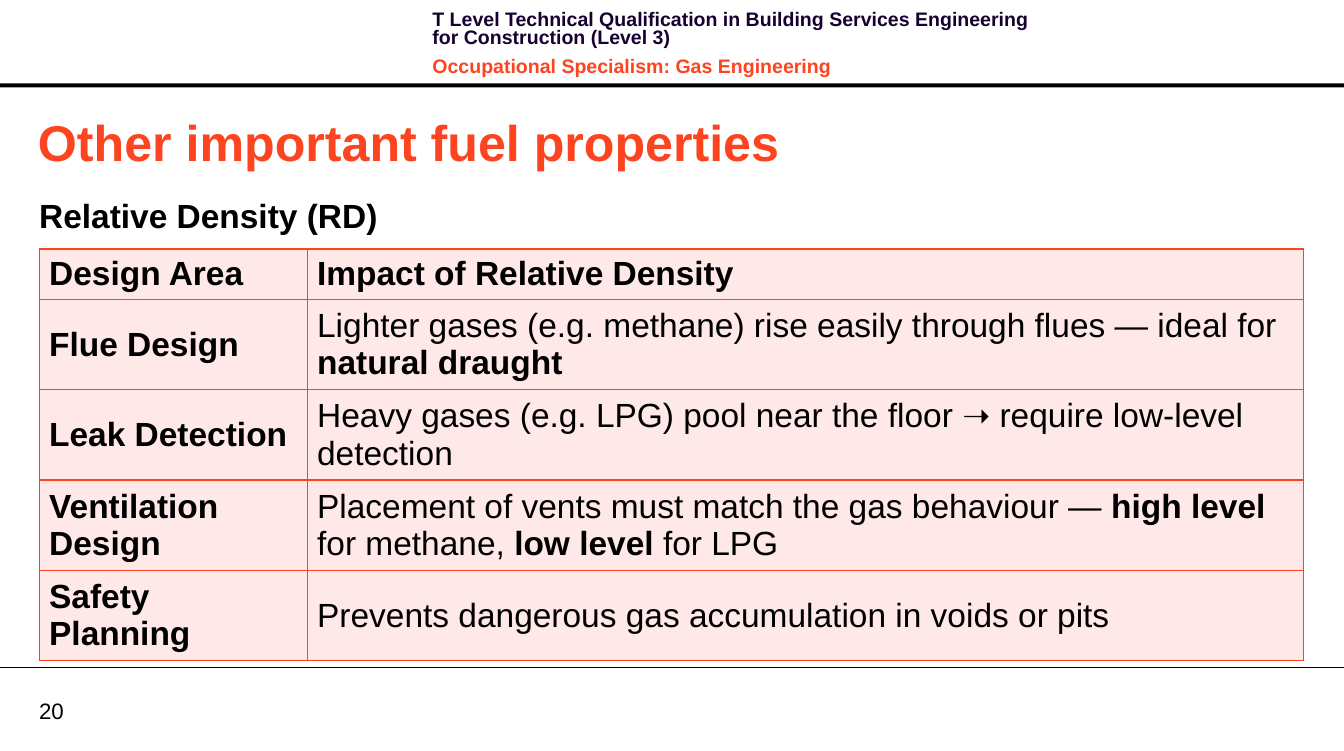
from dataclasses import dataclass

from lxml import etree
from pptx import Presentation
from pptx import util as u
from pptx.dml.color import RGBColor
from pptx.enum import shapes, text
from pptx.oxml.ns import qn


@dataclass(frozen=True)
class Theme:
    font: str = "Arial"
    black: str = "000000"
    navy: str = "170130"
    orange: str = "FC4421"
    pink: str = "FEE9E8"
    title: int = 36
    body: int = 24
    number: int = 16
    header: int = 14


HEADER = (
    "**T Level Technical Qualification in Building Services Engineering for Construction (Level 3)**",
    "**Occupational Specialism: Gas Engineering**",
)
DENSITY_ROWS = (
    ("**Design Area**", "**Impact of Relative Density**"),
    ("**Flue Design**",
     "Lighter gases (e.g. methane) rise easily through flues — ideal for **natural draught**"),
    ("**Leak Detection**",
     "Heavy gases (e.g. LPG) pool near the floor ➝ require low-level detection"),
    ("**Ventilation Design**",
     "Placement of vents must match the gas behaviour — **high level** for methane, **low level** for LPG"),
    ("**Safety Planning**", "Prevents dangerous gas accumulation in voids or pits"),
)


def inches(*values):
    return [u.Inches(v) for v in values]


def assign(target, values):
    for name, value in values.items():
        setattr(target, name, value)


class SlideBuilder:
    def __init__(self, slide, theme):
        self.s = slide
        self.theme = theme

    def add_runs(self, p, content, size, color, **paragraph_format):
        """Fill a paragraph; text between double asterisks is bold."""
        assign(p, paragraph_format)
        for i, part in enumerate(content.split("**")):
            if part:
                r = p.add_run()
                r.text = part
                assign(r.font, {"name": self.theme.font, "size": u.Pt(size), "bold": i % 2 == 1})
                r.font.color.rgb = RGBColor.from_string(color)

    def text_box(self, box, inset=(0, 0), anchor=text.MSO_ANCHOR.TOP):
        tf = self.s.shapes.add_textbox(*inches(*box)).text_frame
        x, y = inches(*inset)
        assign(tf, {"word_wrap": True, "vertical_anchor": anchor, "margin_left": x,
                    "margin_right": x, "margin_top": y, "margin_bottom": y})
        return tf

    def bar(self, box, color):
        sp = self.s.shapes.add_shape(shapes.MSO_SHAPE.RECTANGLE, *inches(*box))
        sp.shadow.inherit = False
        sp.fill.solid()
        sp.fill.fore_color.rgb = RGBColor.from_string(color)
        sp.line.fill.background()

    def rule(self, start, end, color, width):
        line = self.s.shapes.add_connector(shapes.MSO_CONNECTOR.STRAIGHT, *inches(*start, *end))
        line.line.color.rgb = RGBColor.from_string(color)
        line.line.width = u.Pt(width)
        etree.SubElement(line._element.spPr, qn("a:effectLst"))

    def border(self, cell, color, width):
        tc_pr = cell._tc.get_or_add_tcPr()
        for i, side in enumerate(("lnL", "lnR", "lnT", "lnB")):
            ln = etree.Element(qn(f"a:{side}"), w=str(u.Pt(width)))
            fill = etree.SubElement(ln, qn("a:solidFill"))
            etree.SubElement(fill, qn("a:srgbClr"), val=color)
            tc_pr.insert(i, ln)

    def table(self, left, top, widths, heights, rows):
        t = self.theme
        box = inches(left, top, sum(widths), sum(heights))
        table = self.s.shapes.add_table(len(rows), len(widths), *box).table
        assign(table, {"first_row": False, "horz_banding": False})
        for column, width in zip(table.columns, widths):
            column.width = u.Inches(width)
        for row, height, contents in zip(table.rows, heights, rows):
            row.height = u.Inches(height)
            for cell, content in zip(row.cells, contents):
                cell.vertical_anchor = text.MSO_ANCHOR.MIDDLE
                cell.fill.solid()
                cell.fill.fore_color.rgb = RGBColor.from_string(t.pink)
                self.border(cell, t.orange, 1)
                self.add_runs(cell.text_frame.paragraphs[0], content, t.body, t.black)


def main():
    prs = Presentation()
    width, height = 13.39, 7.48
    prs.slide_width, prs.slide_height = inches(width, height)
    t = Theme()
    b = SlideBuilder(prs.slides.add_slide(prs.slide_layouts[6]), t)
    middle = text.MSO_ANCHOR.MIDDLE
    margin = 0.39

    b.bar((0, 0.83, width, 0.04), t.black)
    b.rule((0, 6.65), (width, 6.65), t.black, 0.75)
    number = b.text_box((margin, 6.94, 0.64, 0.27), anchor=middle)
    b.add_runs(number.paragraphs[0], "20", t.number, t.black)

    header = b.text_box((4.21, 0.07, 6.37, 0.64), inset=(0.1, 0.05))
    spacing = {"line_spacing": u.Pt(13.1), "space_after": u.Pt(4)}
    b.add_runs(header.paragraphs[0], HEADER[0], t.header, t.navy, **spacing)
    b.add_runs(header.add_paragraph(), HEADER[1], t.header, t.orange,
               space_before=u.Pt(4), **spacing)

    title = b.text_box((0.28, 1.05, 12.72, 0.71), inset=(0.1, 0.05), anchor=middle)
    b.add_runs(title.paragraphs[0], "**Other important fuel properties**", t.title, t.orange)
    subtitle = b.text_box((margin, 1.9, 12.42, 0.5))
    b.add_runs(subtitle.paragraphs[0], "**Relative Density (RD)**", t.body, t.black,
               line_spacing=1.1)
    b.table(margin, 2.48, (2.67, 9.93), [0.47] + [0.84] * 4, DENSITY_ROWS)

    prs.save("out.pptx")


if __name__ == "__main__":
    main()
